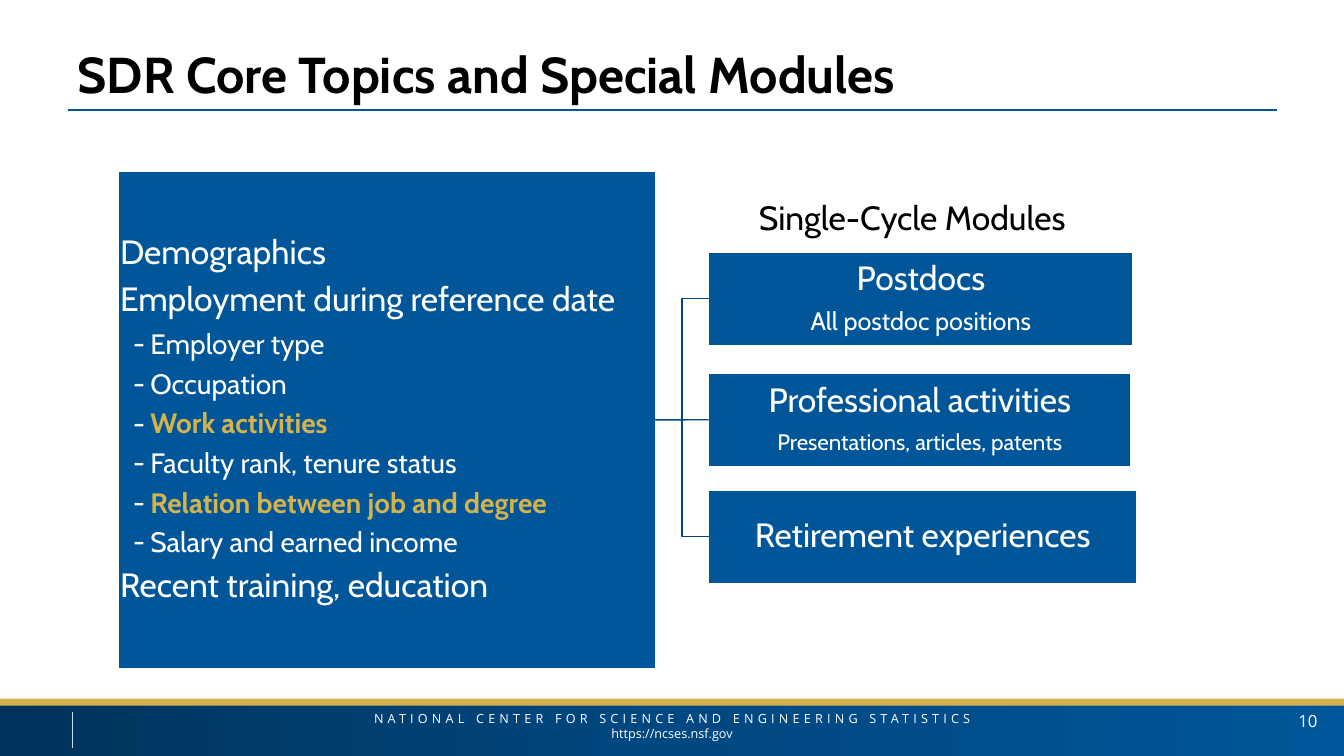
from copy import deepcopy
from dataclasses import dataclass

from lxml.etree import SubElement
from pptx import Presentation
from pptx.dml.color import RGBColor
from pptx.enum.shapes import MSO_CONNECTOR, MSO_SHAPE
from pptx.enum.text import MSO_ANCHOR, MSO_AUTO_SIZE, PP_ALIGN
from pptx.oxml.ns import qn
from pptx.shapes.autoshape import Shape
from pptx.shapes.connector import Connector
from pptx.slide import Slide
from pptx.text.text import TextFrame, _Paragraph
from pptx.util import Inches, Pt

SLIDE_WIDTH = Inches(13.333)
SLIDE_HEIGHT = Inches(7.5)
BLUE = "005699"
GOLD = "D3B34E"
WHITE = "FFFFFF"
BLACK = "000000"
CONNECTOR_BLUE = "00457B"


@dataclass(frozen=True)
class Area:
    """A rectangle in percent of the slide's width and height."""
    left: float
    top: float
    width: float
    height: float


@dataclass(frozen=True)
class Line:
    text: str
    size: float
    color: str = WHITE
    bold: bool = False
    font: str = "Cabin"
    dashed: bool = False
    letter_spacing: int = 0


@dataclass(frozen=True)
class Module:
    top: float
    width: float
    lines: tuple[Line, ...]


CORE_TOPICS = (
    Line("Demographics", 24),
    Line("Employment during reference date", 24),
    Line("Employer type", 20, dashed=True),
    Line("Occupation", 20, dashed=True),
    Line("Work activities", 20, GOLD, bold=True, dashed=True),
    Line("Faculty rank, tenure status", 20, dashed=True),
    Line("Relation between job and degree", 20, GOLD, bold=True, dashed=True),
    Line("Salary and earned income", 20, dashed=True),
    Line("Recent training, education", 24),
)
MODULES = (
    Module(33.33, 31.58, (Line("Postdocs", 24), Line("All postdoc positions", 18))),
    Module(49.33, 31.43, (Line("Professional activities", 24),
                          Line("Presentations, articles, patents", 16))),
    Module(64.8, 31.88, (Line("Retirement experiences", 24),)),
)
FOOTER = (
    Line("NATIONAL CENTER FOR SCIENCE AND ENGINEERING STATISTICS", 9,
         font="Open Sans", letter_spacing=300),
    Line("https://ncses.nsf.gov", 9, font="Open Sans"),
)


def color_of(value: str) -> RGBColor:
    return RGBColor.from_string(value)


def across(share: float) -> int:
    return round(SLIDE_WIDTH * share / 100)


def down(share: float) -> int:
    return round(SLIDE_HEIGHT * share / 100)


def place(shape: Shape, area: Area) -> None:
    shape.left, shape.top = across(area.left), down(area.top)
    shape.width, shape.height = across(area.width), down(area.height)


def paint(shape: Shape, fill: str, outline: str | None = None) -> None:
    shape.fill.solid()
    shape.fill.fore_color.rgb = color_of(fill)
    if outline:
        shape.line.color.rgb = color_of(outline)
        shape.line.width = Pt(1)
    else:
        shape.line.fill.background()


def add_rectangle(slide: Slide, area: Area, fill: str, outline: str | None = None) -> Shape:
    shape = slide.shapes.add_shape(MSO_SHAPE.RECTANGLE, 0, 0, 0, 0)
    place(shape, area)
    shape.shadow.inherit = False
    paint(shape, fill, outline)
    return shape


def add_line(slide: Slide, kind: MSO_CONNECTOR, start: tuple[float, float],
             end: tuple[float, float], color: str, width: float) -> Connector:
    connector = slide.shapes.add_connector(
        kind, across(start[0]), down(start[1]), across(end[0]), down(end[1]))
    connector.line.color.rgb = color_of(color)
    connector.line.width = Pt(width)
    SubElement(connector._element.spPr, qn("a:effectLst"))
    return connector


def set_bullet(paragraph: _Paragraph, dashed: bool) -> None:
    properties = paragraph._p.get_or_add_pPr()
    properties.set("marL", str(Inches(0.3) if dashed else 0))
    properties.set("indent", str(Inches(-0.17) if dashed else 0))
    if dashed:
        SubElement(SubElement(properties, qn("a:buClr")), qn("a:srgbClr"), val=WHITE)
        SubElement(properties, qn("a:buFont"), typeface="Cabin")
        SubElement(properties, qn("a:buChar"), char="-")
    else:
        SubElement(properties, qn("a:buNone"))


def write(frame: TextFrame, lines: tuple[Line, ...], alignment: PP_ALIGN,
          anchor: MSO_ANCHOR, line_spacing: float = 1.0, space_after: float = 0.0) -> None:
    frame.text = "\n".join(line.text for line in lines)
    frame.word_wrap = True
    frame.auto_size = MSO_AUTO_SIZE.NONE
    frame.vertical_anchor = anchor
    for paragraph, line in zip(frame.paragraphs, lines):
        set_bullet(paragraph, line.dashed)
        paragraph.alignment = alignment
        paragraph.line_spacing = line_spacing
        paragraph.space_before = Pt(0)
        paragraph.space_after = Pt(line.size * space_after)
        for run in paragraph.runs:
            run.font.name = line.font
            run.font.size = Pt(line.size)
            run.font.bold = line.bold
            run.font.color.rgb = color_of(line.color)
            if line.letter_spacing:
                run.font._element.set("spc", str(line.letter_spacing))


def write_in_box(shape: Shape, lines: tuple[Line, ...], alignment: PP_ALIGN) -> None:
    frame = shape.text_frame
    frame.margin_left = frame.margin_right = Inches(0.02)
    frame.margin_top = frame.margin_bottom = Inches(0.02)
    write(frame, lines, alignment, MSO_ANCHOR.MIDDLE, 0.9, 0.335)


def add_text(slide: Slide, area: Area, lines: tuple[Line, ...],
             alignment: PP_ALIGN, anchor: MSO_ANCHOR) -> None:
    text_box = slide.shapes.add_textbox(0, 0, 0, 0)
    place(text_box, area)
    write(text_box.text_frame, lines, alignment, anchor)


def add_footer(slide: Slide) -> None:
    band = add_rectangle(slide, Area(0, 93.07, 100, 6.93), BLUE)
    band.fill.gradient()
    band.fill.gradient_angle = 0
    first_stop = band._element.spPr.find(".//" + qn("a:gs"))
    first_stop.addnext(deepcopy(first_stop))
    for stop, position, color in zip(band.fill.gradient_stops, (0, 0.5, 1),
                                     ("00335B", "004881", BLUE)):
        stop.position = position
        stop.color.rgb = color_of(color)
    add_rectangle(slide, Area(0, 92.4, 100, 0.93), GOLD)
    add_text(slide, Area(24.5, 93.33, 51, 6.67), FOOTER, PP_ALIGN.CENTER, MSO_ANCHOR.TOP)
    add_line(slide, MSO_CONNECTOR.STRAIGHT, (5.35, 94.13), (5.35, 98.93), "CCDDEA", 0.5)
    add_text(slide, Area(70.65, 92.67, 28.13, 5.33), (Line("10", 12, font="Open Sans"),),
             PP_ALIGN.RIGHT, MSO_ANCHOR.MIDDLE)


def add_module(slide: Slide, module: Module, core: Shape) -> None:
    box = add_rectangle(slide, Area(52.73, module.top, module.width, 12.4), BLUE, WHITE)
    write_in_box(box, module.lines, PP_ALIGN.CENTER)
    level = abs(box.top + box.height / 2 - core.top - core.height / 2) < down(0.5)
    kind = MSO_CONNECTOR.STRAIGHT if level else MSO_CONNECTOR.ELBOW
    connector = add_line(slide, kind, (0, 0), (0, 0), CONNECTOR_BLUE, 1)
    connector.begin_connect(core, 3)
    connector.end_connect(box, 1)


def main() -> None:
    presentation = Presentation()
    presentation.slide_width, presentation.slide_height = SLIDE_WIDTH, SLIDE_HEIGHT
    slide = presentation.slides.add_slide(presentation.slide_layouts[1])
    add_footer(slide)
    title, core = slide.placeholders
    place(title, Area(5.03, 5.33, 90, 9.2))
    write(title.text_frame, (Line("SDR Core Topics and Special Modules", 36, BLACK, bold=True),),
          PP_ALIGN.LEFT, MSO_ANCHOR.BOTTOM, 0.9)
    add_line(slide, MSO_CONNECTOR.STRAIGHT, (5.03, 14.53), (95.03, 14.53), BLUE, 1)
    place(core, Area(8.78, 22.67, 39.98, 65.73))
    paint(core, BLUE, WHITE)
    write_in_box(core, CORE_TOPICS, PP_ALIGN.LEFT)
    for module in MODULES:
        add_module(slide, module, core)
    add_text(slide, Area(55.73, 25.33, 25.95, 6.67),
             (Line("Single-Cycle Modules", 24, BLACK),), PP_ALIGN.LEFT, MSO_ANCHOR.TOP)
    presentation.save("out.pptx")


if __name__ == "__main__":
    main()
